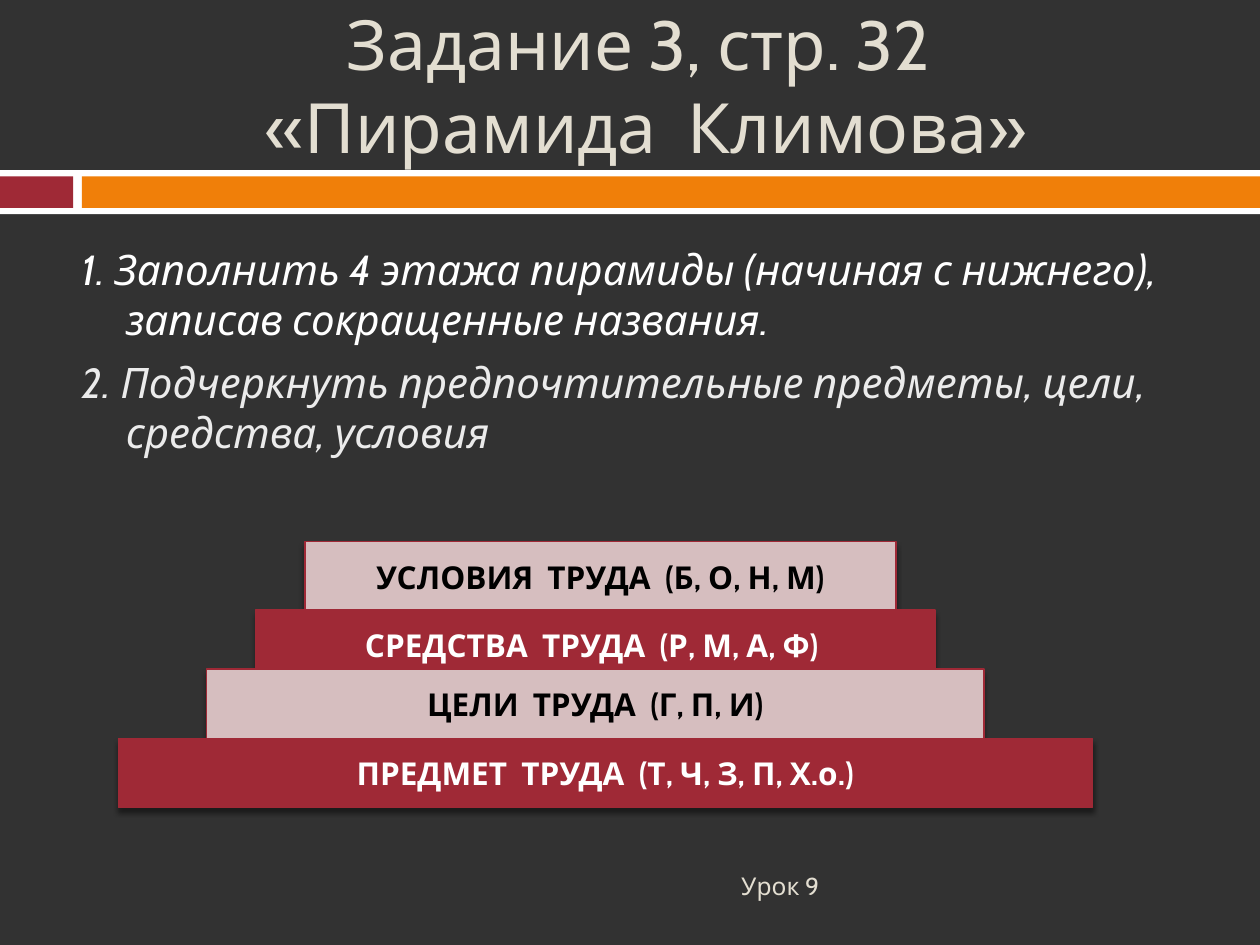
from lxml.etree import SubElement
from pptx import Presentation
from pptx.dml.color import RGBColor
from pptx.enum.shapes import MSO_SHAPE
from pptx.enum.text import MSO_ANCHOR, MSO_AUTO_SIZE, PP_ALIGN
from pptx.oxml.ns import qn
from pptx.util import Inches, Pt

COLORS = {
    "background": "323232",
    "white": "FFFFFF",
    "black": "000000",
    "red": "9F2936",
    "orange": "F07F09",
    "pink": "D6BEBF",
    "cream": "E3DED1",
    "light": "EBEBEB",
}
FONT = "Cabin"

TITLE = "Задание 3, стр. 32 \n«Пирамида  Климова»"
FOOTER = "Урок 9"
TASKS = [
    ("1. Заполнить 4 этажа пирамиды (начиная с нижнего), записав сокращенные названия.", "white"),
    ("2. Подчеркнуть предпочтительные предметы, цели, средства, условия", "light"),
]
BANDS = [
    (0, 1.35, 10, 0.35, "white"),
    (0, 1.4, 0.58, 0.25, "red"),
    (0.65, 1.4, 9.35, 0.25, "orange"),
]
FLOOR_HEIGHT = 0.55
FLOORS = [
    ("УСЛОВИЯ  ТРУДА  (Б, О, Н, М)", 2.42, 4.3, 4.69),
    ("СРЕДСТВА  ТРУДА  (Р, М, А, Ф) ", 2.03, 4.84, 5.39),
    ("ЦЕЛИ  ТРУДА  (Г, П, И)", 1.64, 5.31, 6.17),
    ("ПРЕДМЕТ  ТРУДА  (Т, Ч, З, П, Х.о.)", 0.94, 5.86, 7.73),
]
FLOOR_STYLES = [("pink", "black"), ("red", "white")]


def color(name):
    return RGBColor.from_string(COLORS[name])


def write(para, text, size, ink, align=PP_ALIGN.LEFT, bold=False, italic=False):
    para.alignment = align
    for number, line in enumerate(text.split("\n")):
        if number:
            para.add_line_break()
        span = para.add_run()
        span.text = line
        span.font.name = FONT
        span.font.size = Pt(size)
        span.font.bold = bold
        span.font.italic = italic
        span.font.color.rgb = color(ink)


def set_frame(shape, anchor):
    frame = shape.text_frame
    frame.word_wrap = True
    frame.auto_size = MSO_AUTO_SIZE.NONE
    frame.vertical_anchor = anchor
    return frame


def add_box(page, left, top, width, height, anchor):
    box = page.shapes.add_textbox(Inches(left), Inches(top), Inches(width), Inches(height))
    return set_frame(box, anchor)


def add_rectangle(page, left, top, width, height, fill):
    shape = page.shapes.add_shape(
        MSO_SHAPE.RECTANGLE, Inches(left), Inches(top), Inches(width), Inches(height)
    )
    shape.shadow.inherit = False
    shape.fill.solid()
    shape.fill.fore_color.rgb = color(fill)
    shape.line.fill.background()
    return shape


def add_shadow(shape):
    effects = shape.element.spPr.find(qn("a:effectLst"))
    shadow = SubElement(
        effects, qn("a:outerShdw"), blurRad=str(Pt(3)), dist=str(Pt(2.4)),
        dir="5400000", rotWithShape="0",
    )
    tint = SubElement(shadow, qn("a:srgbClr"), val=COLORS["black"])
    SubElement(tint, qn("a:alpha"), val="45000")


def add_title(page):
    title = page.shapes.title
    title.left, title.top = Inches(0.67), Inches(0.25)
    title.width, title.height = Inches(8.92), Inches(0.84)
    frame = set_frame(title, MSO_ANCHOR.MIDDLE)
    write(frame.paragraphs[0], TITLE, 39.6, "cream", align=PP_ALIGN.CENTER)
    title.element.getparent().append(title.element)


def add_tasks(page):
    frame = add_box(page, 0.55, 1.88, 8.92, 2.11, MSO_ANCHOR.TOP)
    for number, (text, ink) in enumerate(TASKS):
        para = frame.add_paragraph() if number else frame.paragraphs[0]
        para.space_before = Pt(7)
        properties = para._p.get_or_add_pPr()
        properties.set("marL", str(Inches(0.35)))
        properties.set("indent", str(Inches(-0.35)))
        write(para, text, 24, ink, italic=True)


def add_pyramid(page):
    for number, (text, left, top, width) in enumerate(FLOORS):
        fill, ink = FLOOR_STYLES[number % 2]
        floor = add_rectangle(page, left, top, width, FLOOR_HEIGHT, fill)
        floor.line.color.rgb = color("red")
        floor.line.width = Pt(0.79)
        add_shadow(floor)
        frame = set_frame(floor, MSO_ANCHOR.MIDDLE)
        write(frame.paragraphs[0], text, 18, ink, align=PP_ALIGN.CENTER, bold=True)


def main():
    deck = Presentation()
    deck.slide_width, deck.slide_height = Inches(10), Inches(7.5)
    page = deck.slides.add_slide(deck.slide_layouts[5])
    page.background.fill.solid()
    page.background.fill.fore_color.rgb = color("background")
    for band in BANDS:
        add_rectangle(page, *band)
    add_title(page)
    footer = add_box(page, 0.67, 6.83, 5.93, 0.4, MSO_ANCHOR.MIDDLE)
    write(footer.paragraphs[0], FOOTER, 14, "cream", align=PP_ALIGN.RIGHT)
    add_tasks(page)
    add_pyramid(page)
    deck.save("out.pptx")


if __name__ == "__main__":
    main()
